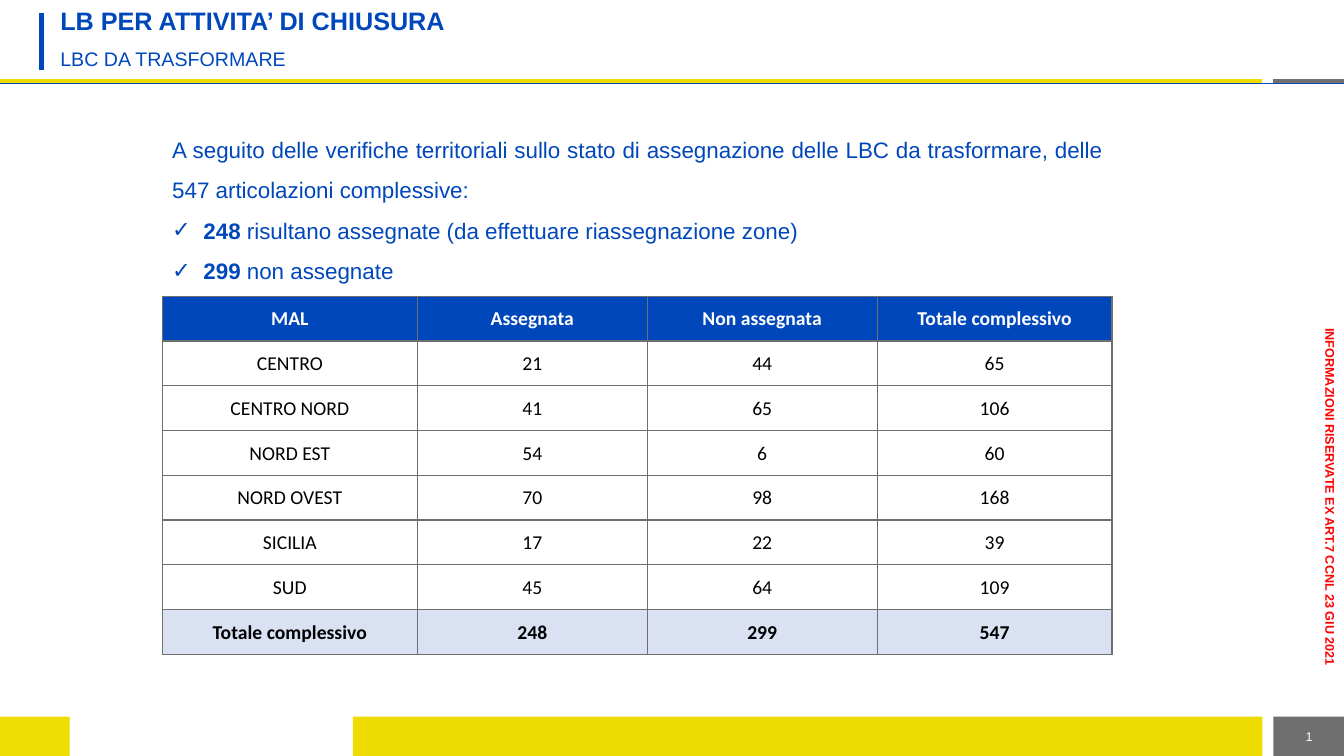
"""Build the LBC closing-activity slide with its MAL summary table."""
from dataclasses import dataclass
from typing import NamedTuple

from lxml.etree import SubElement
from pptx import Presentation
from pptx.dml.color import RGBColor
from pptx.enum.shapes import MSO_CONNECTOR, MSO_SHAPE
from pptx.enum.text import MSO_ANCHOR, PP_ALIGN
from pptx.oxml import parse_xml
from pptx.oxml.ns import nsdecls, qn
from pptx.slide import Slide
from pptx.table import _Cell
from pptx.text.text import TextFrame, _Paragraph
from pptx.util import Inches, Pt


@dataclass(frozen=True)
class Theme:
    """Colours, fonts and type sizes of the slide."""
    blue: str = "0047BB"
    yellow: str = "EEDC00"
    corner_yellow: str = "EFDC01"
    grey: str = "706F6F"
    rule_grey: str = "707173"
    white: str = "FFFFFF"
    black: str = "000000"
    red: str = "FF0000"
    total_blue: str = "D9E1F2"
    sans: str = "Arial"
    table_font: str = "Calibri"
    title_size: float = 18
    body_size: float = 16
    label_size: float = 14
    small_size: float = 9


THEME = Theme()


class Area(NamedTuple):
    """Left, top, width and height in inches."""
    left: float
    top: float
    width: float
    height: float


class Bar(NamedTuple):
    """A filled footer block."""
    area: Area
    color: str


class Rule(NamedTuple):
    """A straight line with its weight in points."""
    start: tuple[float, float]
    end: tuple[float, float]
    color: str
    weight: float


class Style(NamedTuple):
    """Character formatting of a run."""
    size: float
    color: str
    bold: bool = False
    font: str = THEME.sans


class Label(NamedTuple):
    """A one-line text with its place and formatting."""
    text: str
    area: Area
    style: Style
    align: PP_ALIGN = PP_ALIGN.LEFT
    anchor: MSO_ANCHOR = MSO_ANCHOR.MIDDLE
    line_spacing: float = 1
    rotation: float = 0
    padded: bool = True


class Finding(NamedTuple):
    """A ticked count with its explanation."""
    count: str
    meaning: str


class Mal(NamedTuple):
    """Assigned and unassigned units of one MAL."""
    name: str
    assigned: int
    unassigned: int


PAGE_AREA = Area(12.63, 7.11, 0.71, 0.39)
BODY_AREA = Area(1.61, 1.17, 9.43, 1.72)
TABLE_AREA = Area(1.61, 2.94, 9.43, 3.55)
COLUMN_WIDTHS = (2.53, 2.28, 2.28, 2.33)
HEADINGS = ("MAL", "Assegnata", "Non assegnata", "Totale complessivo")

BARS = (
    Bar(Area(0, 7.11, 0.69, 0.39), THEME.corner_yellow),
    Bar(Area(12.52, 7.11, 0.11, 0.39), THEME.white),
    Bar(PAGE_AREA, THEME.grey),
    Bar(Area(3.5, 7.11, 9.02, 0.39), THEME.yellow),
)
RULES = (
    Rule((0, 0.81), (12.52, 0.81), THEME.yellow, 4),
    Rule((12.63, 0.81), (13.33, 0.81), THEME.rule_grey, 4),
    Rule((0.41, 0.13), (0.41, 0.69), THEME.blue, 3.75),
    Rule((0, 0.83), (13.33, 0.83), THEME.blue, 1),
)
LABELS = (
    Label("INFORMAZIONI RISERVATE EX ART.7 CCNL 23 GIU 2021", Area(10.87, 4.81, 4.65, 0.24),
          Style(THEME.small_size, THEME.red, True), PP_ALIGN.CENTER, rotation=90, padded=False),
    Label("LB PER ATTIVITA’ DI CHIUSURA", Area(0.5, 0.04, 12.49, 0.39),
          Style(THEME.title_size, THEME.blue, True), anchor=MSO_ANCHOR.TOP, line_spacing=0.9),
    Label("LBC DA TRASFORMARE", Area(0.5, 0.39, 12.49, 0.42),
          Style(THEME.label_size, THEME.blue), line_spacing=0.9),
    Label("1", PAGE_AREA, Style(THEME.small_size, THEME.white), PP_ALIGN.CENTER),
)
INTRO = ("A seguito delle verifiche territoriali sullo stato di assegnazione delle LBC "
         "da trasformare, delle 547 articolazioni complessive:")
FINDINGS = (
    Finding("248", " risultano assegnate (da effettuare riassegnazione zone)"),
    Finding("299", " non assegnate"),
)
MALS = (
    Mal("CENTRO", 21, 44),
    Mal("CENTRO NORD", 41, 65),
    Mal("NORD EST", 54, 6),
    Mal("NORD OVEST", 70, 98),
    Mal("SICILIA", 17, 22),
    Mal("SUD", 45, 64),
)


def add_run(paragraph: _Paragraph, text: str, style: Style) -> None:
    """Append one formatted run."""
    run = paragraph.add_run()
    run.text = text
    run.font.name = style.font
    run.font.size = Pt(style.size)
    run.font.bold = style.bold
    run.font.color.rgb = RGBColor.from_string(style.color)


def draw_bar(slide: Slide, bar: Bar) -> None:
    """Draw a borderless block."""
    block = slide.shapes.add_shape(MSO_SHAPE.RECTANGLE, *map(Inches, bar.area))
    block.shadow.inherit = False
    block.fill.solid()
    block.fill.fore_color.rgb = RGBColor.from_string(bar.color)
    block.line.fill.background()


def draw_rule(slide: Slide, rule: Rule) -> None:
    """Draw a straight line without shadow."""
    line = slide.shapes.add_connector(MSO_CONNECTOR.STRAIGHT, *map(Inches, rule.start + rule.end))
    line.line.color.rgb = RGBColor.from_string(rule.color)
    line.line.width = Pt(rule.weight)
    SubElement(line._element.spPr, qn("a:effectLst"))


def add_frame(slide: Slide, area: Area, rotation: float = 0) -> TextFrame:
    """Add a wrapping text box and return its frame."""
    box = slide.shapes.add_textbox(*map(Inches, area))
    box.rotation = rotation
    box.text_frame.word_wrap = True
    return box.text_frame


def draw_label(slide: Slide, label: Label) -> None:
    """Draw a one-line text."""
    frame = add_frame(slide, label.area, label.rotation)
    frame.vertical_anchor = label.anchor
    if not label.padded:
        frame.margin_left = frame.margin_right = frame.margin_top = frame.margin_bottom = 0
    paragraph = frame.paragraphs[0]
    paragraph.alignment = label.align
    paragraph.line_spacing = label.line_spacing
    add_run(paragraph, label.text, label.style)


def add_tick(paragraph: _Paragraph) -> None:
    """Give a paragraph a hanging tick bullet."""
    properties = paragraph._p.get_or_add_pPr()
    properties.set("marL", str(Inches(0.31)))
    properties.set("indent", str(-Inches(0.31)))
    SubElement(properties, qn("a:buFont"), typeface=THEME.sans)
    SubElement(properties, qn("a:buChar"), char="✓")


def draw_body(slide: Slide) -> None:
    """Draw the introduction and the ticked findings."""
    frame = add_frame(slide, BODY_AREA)
    plain = Style(THEME.body_size, THEME.blue)
    add_run(frame.paragraphs[0], INTRO, plain)
    for finding in FINDINGS:
        paragraph = frame.add_paragraph()
        add_tick(paragraph)
        add_run(paragraph, finding.count, plain._replace(bold=True))
        add_run(paragraph, finding.meaning, plain)
    for paragraph in frame.paragraphs:
        paragraph.alignment = PP_ALIGN.JUSTIFY
        paragraph.line_spacing = 1.5


def fill_cell(cell: _Cell, text: str, style: Style, fill: str | None) -> None:
    """Write one centred cell with grey borders."""
    cell.vertical_anchor = MSO_ANCHOR.MIDDLE
    cell.margin_left = cell.margin_right = cell.margin_top = Inches(0.01)
    cell.margin_bottom = 0
    if fill:
        cell.fill.solid()
        cell.fill.fore_color.rgb = RGBColor.from_string(fill)
    else:
        cell.fill.background()
    for position, side in enumerate("LRTB"):
        cell._tc.tcPr.insert(position, parse_xml(
            f'<a:ln{side} {nsdecls("a")} w="{Pt(1)}"><a:solidFill>'
            f'<a:srgbClr val="{THEME.grey}"/></a:solidFill></a:ln{side}>'))
    paragraph = cell.text_frame.paragraphs[0]
    paragraph.alignment = PP_ALIGN.CENTER
    add_run(paragraph, text, style)


def draw_table(slide: Slide) -> None:
    """Draw the units per MAL with computed totals."""
    total = Mal("Totale complessivo", sum(m.assigned for m in MALS), sum(m.unassigned for m in MALS))
    rows = [HEADINGS] + [(*mal, mal.assigned + mal.unassigned) for mal in (*MALS, total)]
    table = slide.shapes.add_table(len(rows), len(HEADINGS), *map(Inches, TABLE_AREA)).table
    table.horz_banding = False
    for column, width in zip(table.columns, COLUMN_WIDTHS):
        column.width = Inches(width)
    regular = Style(THEME.label_size, THEME.black, font=THEME.table_font)
    looks = [(regular._replace(color=THEME.white, bold=True), THEME.blue),
             *[(regular, None)] * len(MALS),
             (regular._replace(bold=True), THEME.total_blue)]
    for row, values, (style, fill) in zip(table.rows, rows, looks):
        row.height = Inches(TABLE_AREA.height / len(rows))
        for cell, value in zip(row.cells, values):
            fill_cell(cell, str(value), style, fill)


def main() -> None:
    """Assemble and save the slide."""
    deck = Presentation()
    deck.slide_width, deck.slide_height = Inches(13.33), Inches(7.5)
    slide = deck.slides.add_slide(deck.slide_layouts[6])
    for bar in BARS:
        draw_bar(slide, bar)
    for rule in RULES:
        draw_rule(slide, rule)
    for label in LABELS:
        draw_label(slide, label)
    draw_body(slide)
    draw_table(slide)
    deck.save("out.pptx")


if __name__ == "__main__":
    main()
